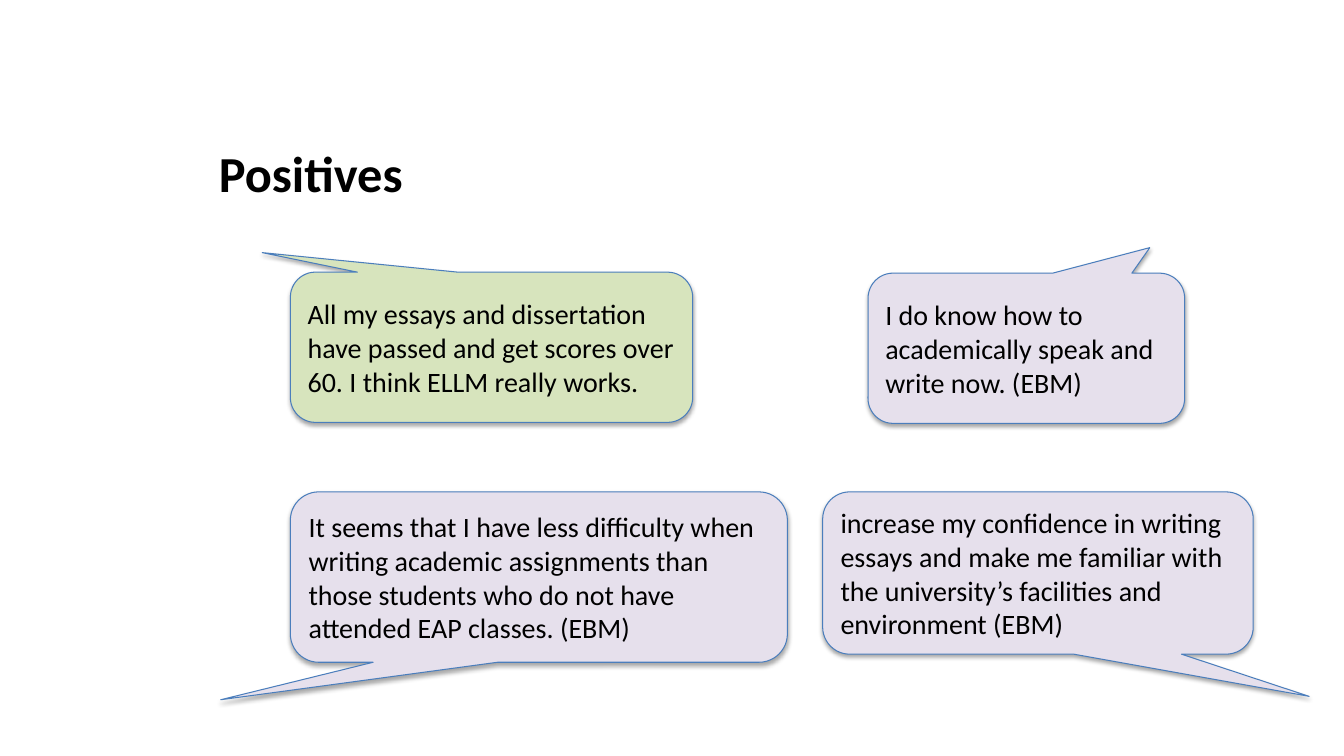
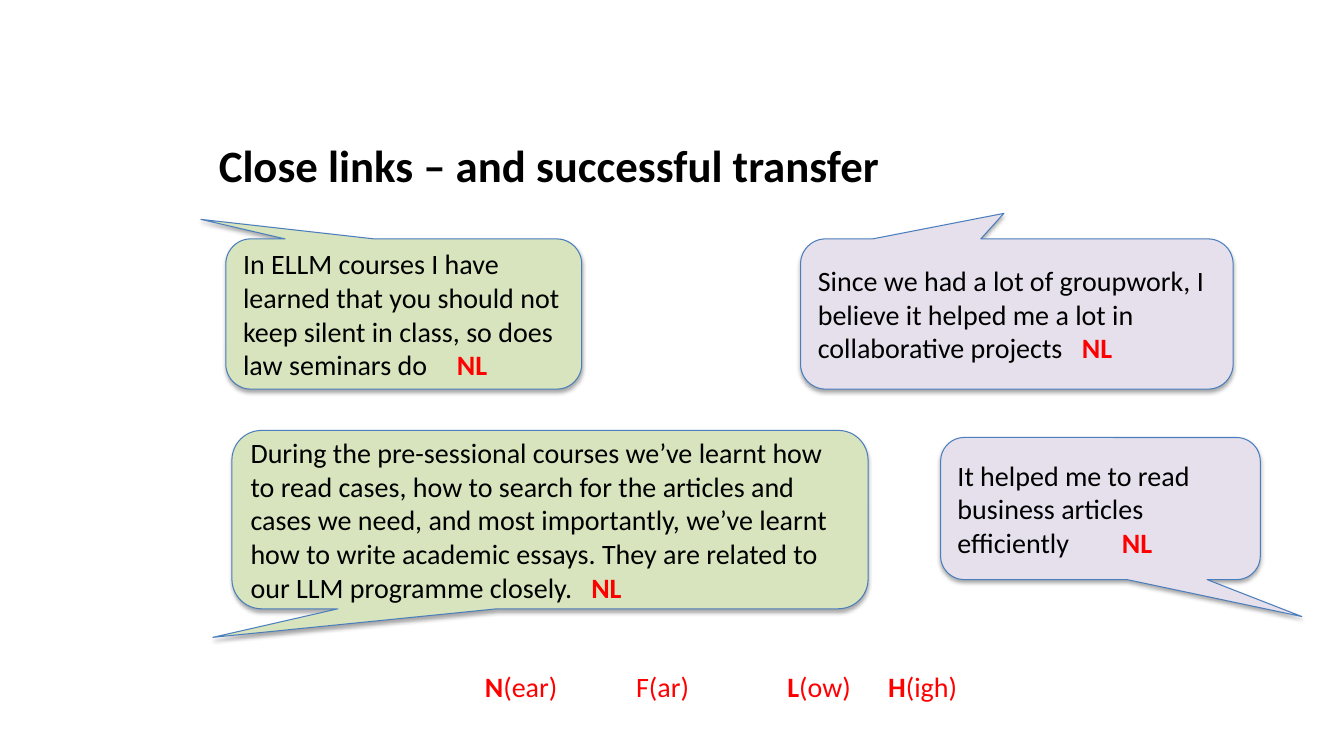
from dataclasses import dataclass
from typing import NamedTuple

from lxml import etree
from pptx import Presentation
from pptx.dml.color import RGBColor
from pptx.enum.shapes import MSO_SHAPE as SHAPE
from pptx.enum.text import MSO_ANCHOR as ANCHOR, MSO_AUTO_SIZE as AUTO, PP_ALIGN as ALIGN
from pptx.oxml.ns import qn
from pptx.util import Inches, Pt

FONT = "Calibri"
BLACK, WHITE, RED = "000000", "FFFFFF", "FF0000"
GREEN, LILAC, OUTLINE = "D7E4BD", "E6E0EC", "4B7EBC"
BODY_SIZE = 20
TITLE_LEFT = 2.07


class Box(NamedTuple):
    left: float
    top: float
    width: float
    height: float


class Run(NamedTuple):
    text: str
    color: str = BLACK
    bold: bool = False


@dataclass
class Quote:
    box: Box
    tail: tuple[float, float]
    fill: str
    text: str
    mark_at: float = 0  # tab stop of the red "NL" mark, 0 for none


def rgb(color: str) -> RGBColor:
    return RGBColor.from_string(color)


def lengths(box: Box) -> list[int]:
    return [Inches(v) for v in box]


def add_runs(p, runs: list[Run], size: int, tabs: tuple[float, ...] = ()) -> None:
    p.alignment = ALIGN.LEFT
    if tabs:
        tab_list = etree.SubElement(p._p.get_or_add_pPr(), qn("a:tabLst"))
        for stop in tabs:
            etree.SubElement(tab_list, qn("a:tab"), pos=str(Inches(stop)), algn="l")
    for run in runs:
        r = p.add_run()
        r.text = run.text
        r.font.name, r.font.size, r.font.bold = FONT, Pt(size), run.bold
        r.font.color.rgb = rgb(run.color)


def add_shadow(sp) -> None:
    sp.shadow.inherit = False
    effects = sp._element.spPr.find(qn("a:effectLst"))
    shadow = etree.SubElement(effects, qn("a:outerShdw"), blurRad=str(Pt(3.1)),
                              dist=str(Pt(1.8)), dir="5400000", rotWithShape="0")
    color = etree.SubElement(shadow, qn("a:srgbClr"), val=BLACK)
    etree.SubElement(color, qn("a:alpha"), val="35000")


def add_quote(s, quote: Quote) -> None:
    sp = s.shapes.add_shape(SHAPE.ROUNDED_RECTANGULAR_CALLOUT, *lengths(quote.box))
    sp.adjustments[0], sp.adjustments[1] = quote.tail
    sp.fill.solid()
    sp.fill.fore_color.rgb = rgb(quote.fill)
    sp.line.color.rgb = rgb(OUTLINE)
    sp.line.width = Pt(0.75)
    add_shadow(sp)
    tf = sp.text_frame
    tf.word_wrap = True
    tf.vertical_anchor = ANCHOR.MIDDLE
    if quote.mark_at:
        runs = [Run(quote.text + "\t"), Run("NL", RED, True)]
        add_runs(tf.paragraphs[0], runs, BODY_SIZE, (quote.mark_at,))
    else:
        add_runs(tf.paragraphs[0], [Run(quote.text)], BODY_SIZE)


def add_slide(prs, title: str, box: Box, size: int, quotes: list[Quote]):
    s = prs.slides.add_slide(prs.slide_layouts[5])
    sp = s.shapes.title
    sp.left, sp.top, sp.width, sp.height = lengths(box)
    sp.fill.solid()
    sp.fill.fore_color.rgb = rgb(WHITE)
    tf = sp.text_frame
    tf.word_wrap = True
    tf.auto_size = AUTO.NONE
    tf.vertical_anchor = ANCHOR.MIDDLE
    add_runs(tf.paragraphs[0], [Run(title, bold=True)], size)
    for quote in quotes:
        add_quote(s, quote)
    return s


def add_legend(s) -> None:
    tf = s.shapes.add_textbox(*lengths(Box(4.71, 6.59, 5.02, 0.44))).text_frame
    tf.word_wrap = True
    runs = [Run("N", RED, True), Run("(ear)\tF(ar)", RED),
            Run("\tL", RED, True), Run("(ow)", RED),
            Run("\tH", RED, True), Run("(igh)", RED)]
    add_runs(tf.paragraphs[0], runs, BODY_SIZE, (1.5, 3, 4))


POSITIVES = [
    Quote(Box(2.88, 2.7, 3.99, 1.49), (-0.57, -0.63), GREEN,
          "All my essays and dissertation have passed and get scores over 60. "
          "I think ELLM really works."),
    Quote(Box(2.88, 4.88, 4.93, 1.69), (-0.64, 0.72), LILAC,
          "It seems that I have less difficulty when writing academic assignments "
          "than those students who do not have attended EAP classes. (EBM)"),
    Quote(Box(8.16, 4.88, 4.27, 1.61), (0.63, 0.76), LILAC,
          "increase my confidence in writing essays and make me familiar with "
          "the university’s facilities and environment (EBM)"),
    Quote(Box(8.61, 2.71, 3.14, 1.49), (0.39, -0.67), LILAC,
          "I do know how to academically speak and write now. (EBM)"),
]

CLOSE_LINKS = [
    Quote(Box(2.24, 2.37, 3.53, 1.49), (-0.57, -0.63), GREEN,
          "In ELLM courses I have learned that you should not keep silent in class, "
          "so does law seminars do", 2.12),
    Quote(Box(7.94, 2.37, 4.29, 1.49), (-0.03, -0.67), LILAC,
          "Since we had a lot of groupwork, I believe it helped me a lot in "
          "collaborative projects", 2.62),
    Quote(Box(9.33, 4.34, 3.17, 1.41), (0.63, 0.76), LILAC,
          "It helped me to read business articles efficiently", 1.63),
    Quote(Box(2.3, 4.27, 6.31, 1.77), (-0.53, 0.66), GREEN,
          "During the pre-sessional courses we’ve learnt how to read cases, how to "
          "search for the articles and cases we need, and most importantly, we’ve "
          "learnt how to write academic essays. They are related to our LLM "
          "programme closely.", 3.38),
]


def main() -> None:
    prs = Presentation()
    prs.slide_width, prs.slide_height = Inches(13.33), Inches(7.5)

    # Positive feedback
    add_slide(prs, "Positives", Box(TITLE_LEFT, 1.1, 2.31, 1.22), 36, POSITIVES)

    # Transfer, with the key to the marks
    s = add_slide(prs, "Close links – and successful transfer",
                  Box(TITLE_LEFT, 1.12, 6.88, 1.03), 32, CLOSE_LINKS)
    add_legend(s)

    prs.save("out.pptx")


if __name__ == "__main__":
    main()
